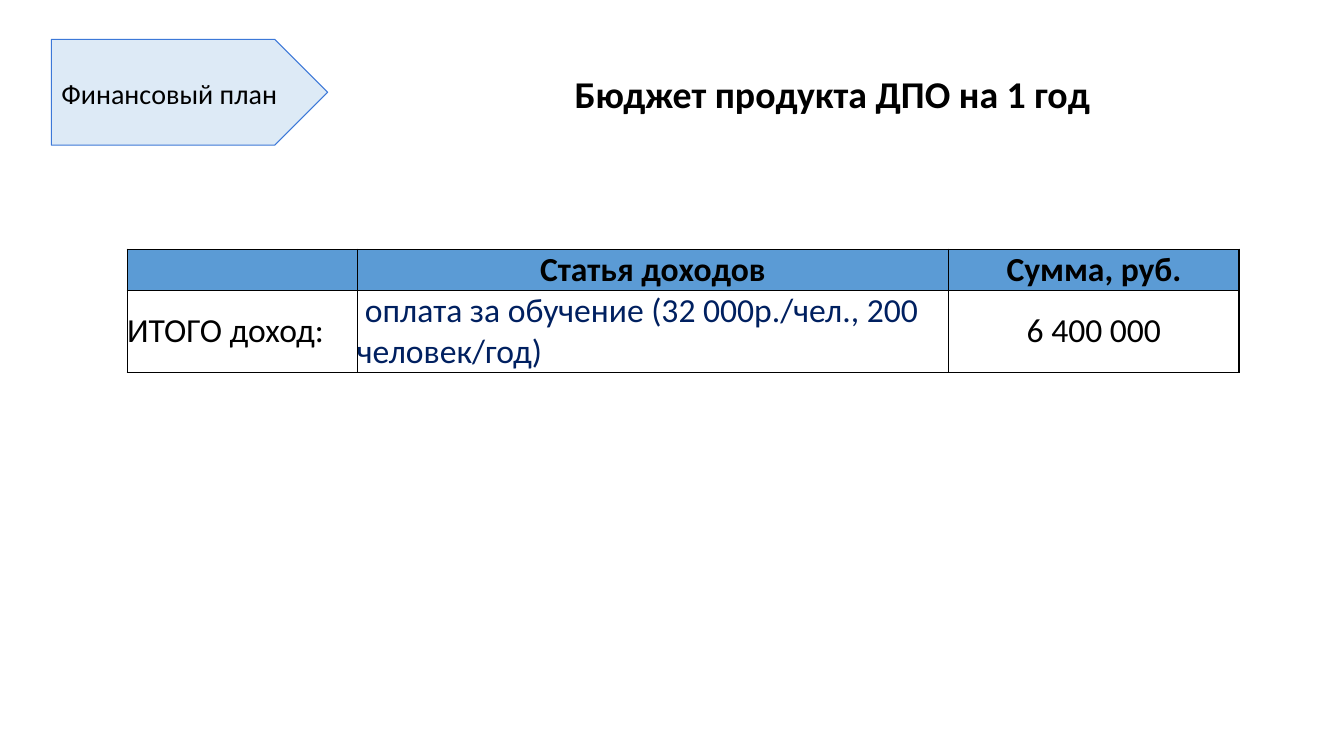
from dataclasses import dataclass

from lxml import etree
from pptx import Presentation
from pptx.dml.color import RGBColor
from pptx.enum.shapes import MSO_SHAPE
from pptx.enum.text import MSO_ANCHOR, MSO_AUTO_SIZE, PP_ALIGN
from pptx.oxml.ns import qn
from pptx.util import Inches, Pt

PENTAGON = MSO_SHAPE.PENTAGON
MIDDLE, TOP = MSO_ANCHOR.MIDDLE, MSO_ANCHOR.TOP
LEFT, CENTER = PP_ALIGN.LEFT, PP_ALIGN.CENTER
FIXED = MSO_AUTO_SIZE.NONE

FONT = "Calibri"
BLACK, NAVY = "000000", "002060"
HEADER_BLUE, PALE_BLUE, OUTLINE_BLUE = "5B9BD5", "DDEAF6", "3C78D8"
TITLE_ONLY = 5
THIN, THICK = 0.5, 1.5
COLUMN_WIDTHS = (22.8, 58.7, 28.8)
ROW_HEIGHTS = (4.1, 8)


@dataclass(frozen=True)
class Area:
    """Place on a grid of square cells, ten to the inch."""
    left: float
    top: float
    width: float
    height: float

    def box(self) -> tuple[int, ...]:
        return tuple(map(grid, (self.left, self.top, self.width, self.height)))


@dataclass(frozen=True)
class BudgetCell:
    text: str = ""
    align: PP_ALIGN = CENTER
    color: str = BLACK
    bold: bool = False
    fill: str | None = None
    indent: float = 0


TITLE_AREA = Area(34.4, 6.2, 96.3, 5.9)
TAG_AREA = Area(5.1, 3.9, 27.4, 10.5)
TAG_TEXT_AREA = Area(5.1, 6.6, 25.5, 5.4)
BUDGET_AREA = Area(12.6, 24.7, sum(COLUMN_WIDTHS), sum(ROW_HEIGHTS))
BUDGET = (
    (BudgetCell(fill=HEADER_BLUE),
     BudgetCell("Статья доходов", bold=True, fill=HEADER_BLUE),
     BudgetCell("Сумма, руб.", bold=True, fill=HEADER_BLUE)),
    (BudgetCell("ИТОГО доход:", LEFT),
     BudgetCell("оплата за обучение (32 000р./чел., 200 человек/год)",
                LEFT, NAVY, indent=0.8),
     BudgetCell("6 400 000")),
)


def grid(cells: float) -> int:
    return Inches(cells / 10)


def rgb(value: str) -> RGBColor:
    return RGBColor.from_string(value)


def write(frame, text: str, *, size: float, color: str = BLACK,
          bold: bool = False, align: PP_ALIGN = LEFT,
          spacing: float = 1.0, indent: float = 0) -> None:
    """Fill the frame with one paragraph; indent moves its first line."""
    paragraph = frame.paragraphs[0]
    paragraph.alignment = align
    paragraph.line_spacing = spacing
    if indent:
        properties = paragraph._p.get_or_add_pPr()
        properties.set("marL", "0")
        properties.set("indent", str(grid(indent)))
    run = paragraph.add_run()
    run.text = text
    font = run.font
    font.name, font.size, font.bold = FONT, Pt(size), bold
    font.color.rgb = rgb(color)


def set_frame(frame, anchor: MSO_ANCHOR, side: float, vertical: float) -> None:
    frame.word_wrap = True
    frame.auto_size = FIXED
    frame.vertical_anchor = anchor
    frame.margin_left = frame.margin_right = grid(side)
    frame.margin_top = frame.margin_bottom = grid(vertical)


def add_border(cell, side: str, width: float) -> None:
    line = etree.SubElement(cell._tc.get_or_add_tcPr(), qn(f"a:ln{side}"),
                            w=str(Pt(width)))
    fill = etree.SubElement(line, qn("a:solidFill"))
    etree.SubElement(fill, qn("a:srgbClr"), val=BLACK)


def add_title(slide) -> None:
    title = slide.shapes.title
    title.left, title.top, title.width, title.height = TITLE_AREA.box()
    set_frame(title.text_frame, MIDDLE, 1, 0.5)
    write(title.text_frame, "Бюджет продукта ДПО на 1 год", size=27,
          bold=True, align=CENTER, spacing=1.07)


def add_section_tag(slide) -> None:
    tag = slide.shapes.add_shape(PENTAGON, *TAG_AREA.box())
    tag.shadow.inherit = False
    tag.fill.solid()
    tag.fill.fore_color.rgb = rgb(PALE_BLUE)
    tag.line.color.rgb = rgb(OUTLINE_BLUE)
    tag.line.width = Pt(0.75)
    label = slide.shapes.add_textbox(*TAG_TEXT_AREA.box()).text_frame
    set_frame(label, TOP, 1, 1)
    write(label, "Финансовый план", size=20)


def format_cell(cell, content: BudgetCell, last: bool) -> None:
    cell.vertical_anchor = MIDDLE
    cell.margin_left = cell.margin_right = 0
    cell.margin_top = cell.margin_bottom = 0
    for side in "LRTB":
        add_border(cell, side, THICK if last and side == "R" else THIN)
    if content.fill:
        cell.fill.solid()
        cell.fill.fore_color.rgb = rgb(content.fill)
    else:
        cell.fill.background()
    if content.text:
        write(cell.text_frame, content.text, size=24, color=content.color,
              bold=content.bold, align=content.align, indent=content.indent)


def add_budget(slide) -> None:
    table = slide.shapes.add_table(len(ROW_HEIGHTS), len(COLUMN_WIDTHS),
                                   *BUDGET_AREA.box()).table
    table.horz_banding = False
    for column, width in zip(table.columns, COLUMN_WIDTHS):
        column.width = grid(width)
    for row, height, contents in zip(table.rows, ROW_HEIGHTS, BUDGET):
        row.height = grid(height)
        for index, (cell, content) in enumerate(zip(row.cells, contents), 1):
            format_cell(cell, content, index == len(contents))


def main() -> None:
    deck = Presentation()
    deck.slide_width, deck.slide_height = Inches(13.33), Inches(7.5)
    slide = deck.slides.add_slide(deck.slide_layouts[TITLE_ONLY])
    add_budget(slide)
    add_title(slide)
    add_section_tag(slide)
    deck.save("out.pptx")


if __name__ == "__main__":
    main()
